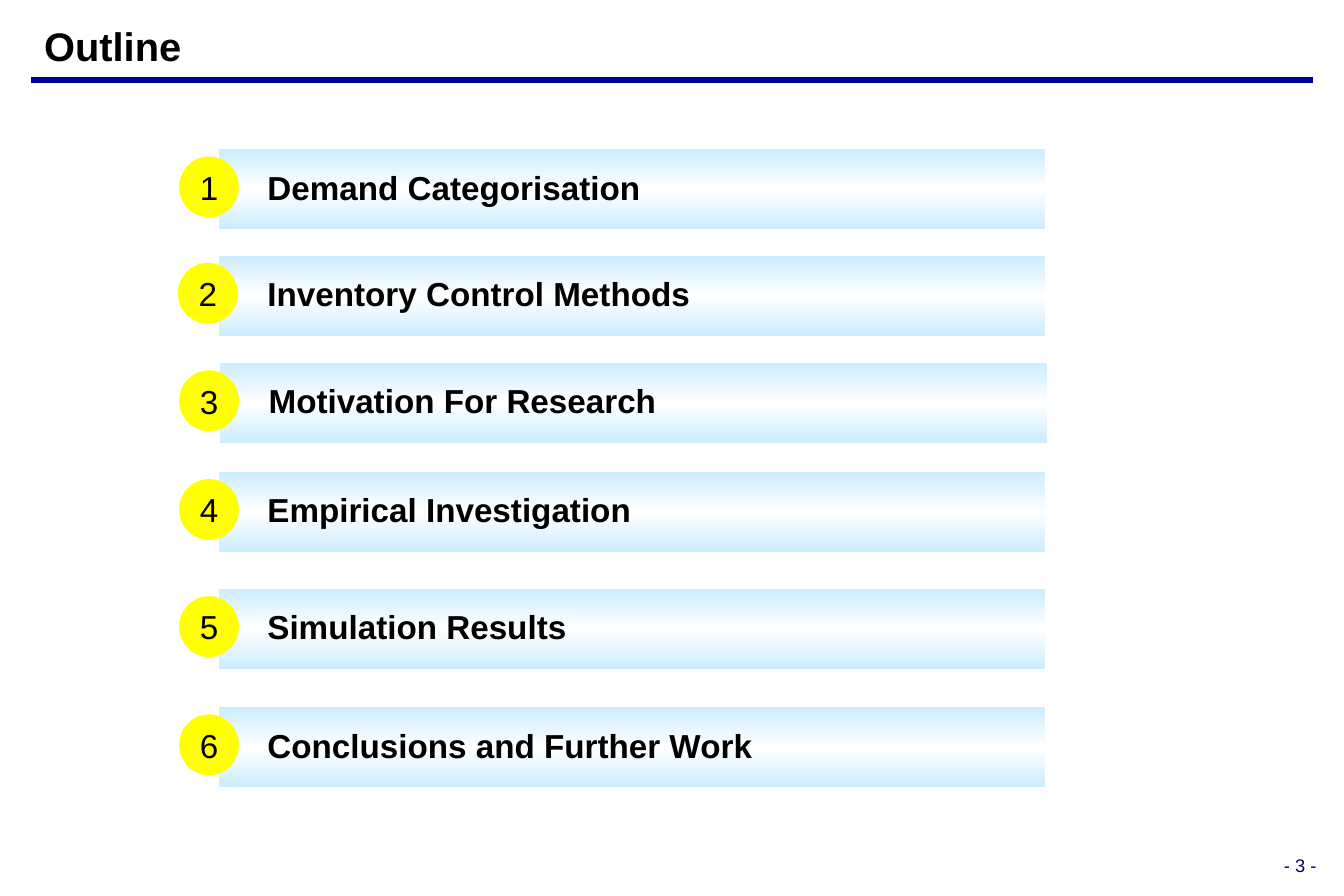
from copy import deepcopy

from lxml.etree import SubElement
from pptx import Presentation
from pptx.dml.color import RGBColor
from pptx.enum.shapes import MSO_CONNECTOR as Connector, MSO_SHAPE as Shape
from pptx.enum.text import MSO_ANCHOR as Anchor, PP_ALIGN as Align
from pptx.oxml.ns import qn
from pptx.util import Inches, Pt

BLACK = RGBColor(0x00, 0x00, 0x00)
WHITE = RGBColor(0xFF, 0xFF, 0xFF)
NAVY = RGBColor(0x00, 0x00, 0x66)
RULE_BLUE = RGBColor(0x00, 0x00, 0x99)
PALE_BLUE = RGBColor(0xCC, 0xEC, 0xFF)
YELLOW = RGBColor(0xFF, 0xFF, 0x00)

BAR_LEFT = 1.83
BADGE_LEFT = 1.5
BADGE_DROP = 0.06  # from the top of a bar to the top of its badge

# section, top of its bar, sideways shift of bar and of badge
SECTIONS = [
    ("Demand Categorisation", 1.25, 0, 0),
    ("Inventory Control Methods", 2.14, 0, -0.01),
    ("Motivation For Research", 3.04, 0.01, 0),
    ("Empirical Investigation", 3.95, 0, 0),
    ("Simulation Results", 4.93, 0, 0),
    ("Conclusions and Further Work", 5.92, 0, 0),
]


class OutlineSlide:
    font_name = "Arial"

    def __init__(self, slide):
        self.shapes = slide.shapes

    def set_text(self, shape, text, size, color=BLACK, bold=False, align=Align.LEFT,
                 anchor=Anchor.MIDDLE, insets=(0.1, 0.05), wrap=True):
        """Put one styled paragraph into the shape and return it."""
        frame = shape.text_frame
        frame.text = text
        frame.word_wrap = wrap
        frame.vertical_anchor = anchor
        frame.margin_left = frame.margin_right = Inches(insets[0])
        frame.margin_top = frame.margin_bottom = Inches(insets[1])
        paragraph = frame.paragraphs[0]
        paragraph.alignment = align
        font = paragraph.runs[0].font
        font.name, font.size, font.bold = self.font_name, Pt(size), bold
        font.color.rgb = color
        return paragraph

    def label(self, left, top, width, height, text, size, **style):
        box = self.shapes.add_textbox(
            Inches(left), Inches(top), Inches(width), Inches(height))
        self.set_text(box, text, size, anchor=Anchor.BOTTOM, **style)

    def rule(self, left, right, top):
        line = self.shapes.add_connector(
            Connector.STRAIGHT, Inches(left), Inches(top), Inches(right), Inches(top))
        line.line.color.rgb = RULE_BLUE
        line.line.width = Pt(4)
        SubElement(line._element.spPr, qn("a:effectLst"))

    def plain_shape(self, kind, left, top, width, height):
        shape = self.shapes.add_shape(
            kind, Inches(left), Inches(top), Inches(width), Inches(height))
        shape.shadow.inherit = False
        shape.line.fill.background()
        return shape

    def bar(self, left, top, section):
        bar = self.plain_shape(Shape.RECTANGLE, left, top, 6.92, 0.67)
        bar.fill.gradient()
        bar.fill.gradient_angle = 90
        stop_list = bar._element.spPr.find(qn("a:gradFill")).find(qn("a:gsLst"))
        stop_list.append(deepcopy(stop_list[0]))
        colors = (PALE_BLUE, WHITE, PALE_BLUE)
        for stop, color, position in zip(bar.fill.gradient_stops, colors, (0, 0.5, 1)):
            stop.color.rgb = color
            stop.position = position
        paragraph = self.set_text(bar, section, 20, bold=True)
        paragraph.line_spacing = 0.9
        paragraph._p.get_or_add_pPr().set("marL", str(Inches(0.31)))

    def badge(self, left, top, number):
        badge = self.plain_shape(Shape.OVAL, left, top, 0.5, 0.51)
        badge.fill.solid()
        badge.fill.fore_color.rgb = YELLOW
        paragraph = self.set_text(badge, str(number), 20, align=Align.CENTER,
                                  insets=(0.1, 0.09), wrap=False)
        space_before = SubElement(paragraph._p.get_or_add_pPr(), qn("a:spcBef"))
        SubElement(space_before, qn("a:spcPct")).set("val", "30000")


def main():
    deck = Presentation()
    deck.slide_width, deck.slide_height = Inches(11.25), Inches(7.5)
    outline = OutlineSlide(deck.slides.add_slide(deck.slide_layouts[6]))

    outline.label(10.46, 7.12, 0.63, 0.24, "- 3 -", 11, color=NAVY,
                  align=Align.RIGHT, insets=(0.07, 0.03))
    outline.rule(0.26, 10.99, 0.67)
    outline.label(0.37, 0.18, 9.97, 0.4, "Outline", 24, bold=True, insets=(0, 0))

    for number, (section, top, bar_shift, badge_shift) in enumerate(SECTIONS, 1):
        outline.bar(BAR_LEFT + bar_shift, top, section)
        outline.badge(BADGE_LEFT + badge_shift, top + BADGE_DROP, number)

    deck.save("out.pptx")


if __name__ == "__main__":
    main()
